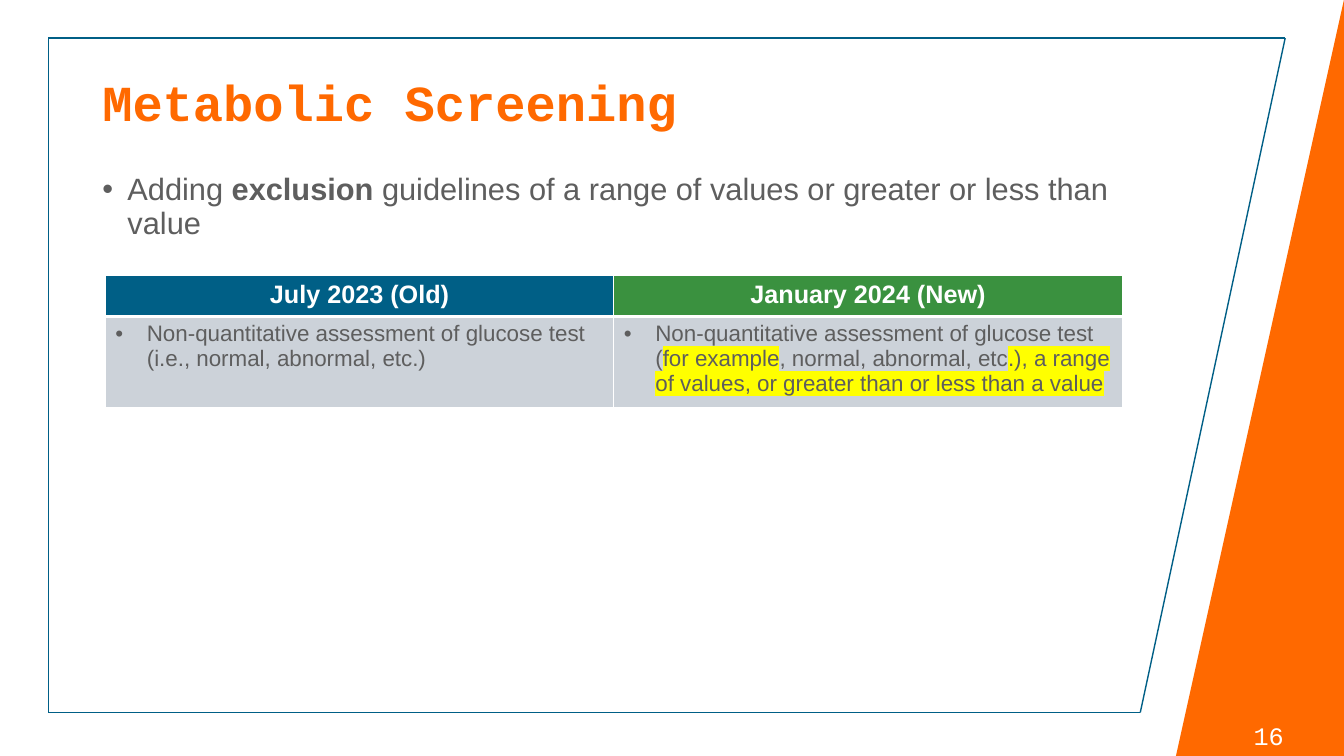
from dataclasses import dataclass
from itertools import pairwise

from lxml import etree
from pptx import Presentation
from pptx import util as u
from pptx.dml.color import RGBColor
from pptx.enum import shapes, text
from pptx.oxml import ns


@dataclass(frozen=True)
class Theme:
    orange: str = "FF6900"
    blue: str = "005F86"
    green: str = "3A913F"
    gray: str = "5E5E5E"
    pale: str = "CCD2D9"
    white: str = "FFFFFF"
    yellow: str = "FFFF00"
    sans: str = "Arial"
    mono: str = "Courier New"
    title_size: int = 36
    body_size: int = 22
    header_size: int = 18
    cell_size: int = 16
    number_size: int = 18


THEME = Theme()


@dataclass(frozen=True)
class Box:
    left: float
    top: float
    width: float
    height: float

    def lengths(self):
        return [u.Pt(n) for n in (self.left, self.top, self.width, self.height)]


def add_xml(parent, tag, **attributes):
    return etree.SubElement(parent, ns.qn(tag), attributes)


def style_run(span, size, color, font=THEME.sans, bold=False):
    span.font.size = u.Pt(size)
    span.font.name = font
    span.font.bold = bold
    span.font.color.rgb = RGBColor.from_string(color)


def highlight(span, color):
    mark = etree.Element(ns.qn("a:highlight"))
    add_xml(mark, "a:srgbClr", val=color)
    span._r.get_or_add_rPr().find(ns.qn("a:solidFill")).addnext(mark)


def add_bullet(para, indent):
    properties = para._p.get_or_add_pPr()
    properties.set("marL", str(u.Pt(indent)))
    properties.set("indent", str(-u.Pt(indent)))
    add_xml(properties, "a:buFont", typeface=THEME.sans)
    add_xml(properties, "a:buChar", char="•")


def add_text_box(page, box, anchor):
    frame = page.shapes.add_textbox(*box.lengths()).text_frame
    frame.word_wrap = True
    frame.vertical_anchor = anchor
    return frame


# Orange wedge on the right edge
def draw_wedge(page, box):
    wedge = page.shapes.add_shape(shapes.MSO_SHAPE.RIGHT_TRIANGLE, *box.lengths())
    wedge.shadow.inherit = False
    wedge.fill.solid()
    wedge.fill.fore_color.rgb = RGBColor.from_string(THEME.orange)
    wedge.line.fill.background()
    wedge._element.spPr.xfrm.set("flipH", "1")


# Thin frame whose right side slants inwards
def draw_frame(page, box, slant):
    right, bottom = box.left + box.width, box.top + box.height
    corners = [(box.left, box.top), (right, box.top),
               (right - slant, bottom), (box.left, bottom)]
    for start, end in pairwise(corners + corners[:1]):
        side = page.shapes.add_connector(
            shapes.MSO_CONNECTOR.STRAIGHT, *map(u.Pt, start + end))
        side.line.color.rgb = RGBColor.from_string(THEME.blue)
        side.line.width = u.Pt(1)
        add_xml(side._element.spPr, "a:effectLst")


def draw_title(page, box, words):
    para = add_text_box(page, box, text.MSO_ANCHOR.MIDDLE).paragraphs[0]
    para.text = words
    para.line_spacing = 0.9
    style_run(para.runs[0], THEME.title_size, THEME.orange, THEME.mono, True)


def draw_number(page, box, number):
    para = add_text_box(page, box, text.MSO_ANCHOR.MIDDLE).paragraphs[0]
    para.text = number
    para.alignment = text.PP_ALIGN.CENTER
    style_run(para.runs[0], THEME.number_size, THEME.white, THEME.mono)


# Bulleted statement; each part is (words, bold)
def draw_body(page, box, parts):
    para = add_text_box(page, box, text.MSO_ANCHOR.TOP).paragraphs[0]
    para.line_spacing = 0.9
    add_bullet(para, 18)
    for words, bold in parts:
        span = para.add_run()
        span.text = words
        style_run(span, THEME.body_size, THEME.gray, bold=bold)


def paint_cell(cell, fill, bottom_width):
    cell.fill.solid()
    cell.fill.fore_color.rgb = RGBColor.from_string(fill)
    properties = cell._tc.get_or_add_tcPr()
    for place, side in enumerate("LRTB"):
        width = bottom_width if side == "B" else 1
        border = etree.Element(ns.qn(f"a:ln{side}"), w=str(u.Pt(width)))
        add_xml(add_xml(border, "a:solidFill"), "a:srgbClr", val=THEME.white)
        properties.insert(place, border)


# Comparison table; each column is (heading, fill, [(words, marked)])
def draw_table(page, box, header_height, columns):
    table = page.shapes.add_table(2, len(columns), *box.lengths()).table
    table.rows[0].height = u.Pt(header_height)
    table.rows[1].height = u.Pt(box.height - header_height)
    for index, (heading, fill, parts) in enumerate(columns):
        table.columns[index].width = u.Pt(box.width / len(columns))
        header, content = table.cell(0, index), table.cell(1, index)
        paint_cell(header, fill, 3)
        para = header.text_frame.paragraphs[0]
        para.text = heading
        para.alignment = text.PP_ALIGN.CENTER
        style_run(para.runs[0], THEME.header_size, THEME.white, bold=True)

        paint_cell(content, THEME.pale, 1)
        para = content.text_frame.paragraphs[0]
        add_bullet(para, 22.5)
        for words, marked in parts:
            span = para.add_run()
            span.text = words
            style_run(span, THEME.cell_size, THEME.gray)
            if marked:
                highlight(span, THEME.yellow)


def build_comparison_page(deck, box):
    page = deck.slides.add_slide(deck.slide_layouts[6])
    right, bottom = box.left + box.width, box.top + box.height
    left = box.left + 66

    draw_wedge(page, Box(right - 120, box.top, 120, box.height))
    draw_frame(page, Box(box.left + 34.5, box.top + 27.2,
                         box.width - 76.5, box.height - 58.2), 103.5)
    draw_number(page, Box(right - 80, bottom - 29, 52.5, 29), "16")
    draw_title(page, Box(left, box.top + 29, 828, 92), "Metabolic Screening")
    draw_body(page, Box(left, box.top + 121, 744.5, 355), [
        ("Adding ", False),
        ("exclusion", True),
        (" guidelines of a range of values or greater or less than value", False),
    ])
    draw_table(page, Box(left + 9.2, box.top + 196.8, 726.5, 90), 29.2, [
        ("July 2023 (Old)", THEME.blue, [
            ("Non-quantitative assessment of glucose test "
             "(i.e., normal, abnormal, etc.)", False),
        ]),
        ("January 2024 (New)", THEME.green, [
            ("Non-quantitative assessment of glucose test (", False),
            ("for example", True),
            (", normal, abnormal, etc", False),
            (".), a range of values, or greater than or less than a value", True),
        ]),
    ])


def main():
    deck = Presentation()
    deck.slide_width, deck.slide_height = u.Pt(960), u.Pt(540)
    build_comparison_page(deck, Box(0, 0, 960, 540))
    deck.save("out.pptx")


if __name__ == "__main__":
    main()
